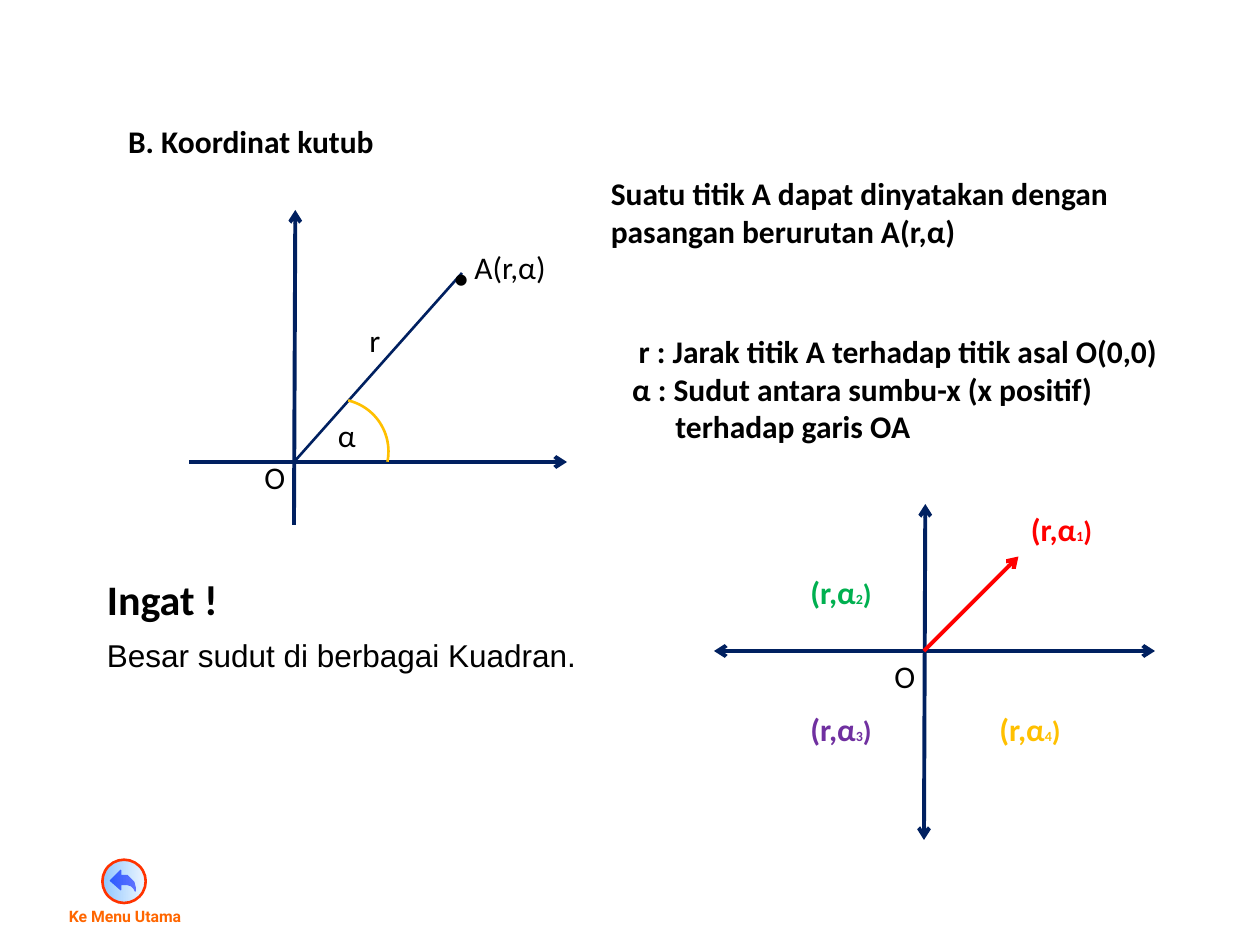
"""Build the slide that introduces polar coordinates."""
from dataclasses import dataclass

from lxml import etree
from pptx import Presentation
from pptx.dml.color import RGBColor
from pptx.enum.shapes import MSO_CONNECTOR, MSO_SHAPE
from pptx.enum.text import MSO_ANCHOR, MSO_AUTO_SIZE, PP_ALIGN
from pptx.oxml.ns import qn
from pptx.util import Emu, Pt

STRAIGHT = MSO_CONNECTOR.STRAIGHT
ARC, OVAL = MSO_SHAPE.ARC, MSO_SHAPE.OVAL
TOP, LEFT, NO_FIT = MSO_ANCHOR.TOP, PP_ALIGN.LEFT, MSO_AUTO_SIZE.NONE
PX = 9525


@dataclass(frozen=True)
class Theme:
    """Colours, fonts and type sizes of the slide."""
    ink: str = "000000"
    navy: str = "002060"
    red: str = "FF0000"
    green: str = "00B050"
    purple: str = "7030A0"
    gold: str = "FFC000"
    blue: str = "0000FF"
    ring: str = "FF3300"
    caption: str = "FF6600"
    sky: str = "3399FF"
    pale: str = "DFEFFF"
    font: str = "Calibri"
    plain_font: str = "Arial"
    menu_font: str = "Roboto"
    heading: int = 24
    body: int = 18
    bracket: int = 16
    small: int = 9
    index: int = 8
    thick: float = 2.25
    thin: float = 1.5
    hairline: float = 0.63


THEME = Theme()


@dataclass(frozen=True)
class Box:
    """A rectangle in px."""
    left: int
    top: int
    width: int
    height: int = 38

    def emu(self) -> tuple:
        """Return the rectangle in EMU."""
        return tuple(px(n) for n in (self.left, self.top, self.width, self.height))


@dataclass(frozen=True)
class Label:
    """A text of one format in its box."""
    text: str
    box: Box
    size: int = THEME.body
    bold: bool = False
    font: str = THEME.font
    color: str = THEME.ink
    wrap: bool = False


@dataclass(frozen=True)
class Line:
    """A straight line with optional arrowheads."""
    start: tuple
    end: tuple
    color: str = THEME.navy
    width: float = THEME.thick
    head: bool = False
    tail: bool = True


@dataclass(frozen=True)
class Quadrant:
    """The polar point that stands for one quadrant."""
    index: str
    left: int
    top: int
    color: str


LINES = (
    Line((224, 400), (225, 160)),
    Line((144, 352), (432, 352)),
    Line((224, 352), (352, 208), width=THEME.thin, tail=False),
    Line((705, 384), (704, 640), head=True),
    Line((544, 496), (880, 496), head=True),
    Line((704, 496), (776, 424), color=THEME.red),
)
LABELS = (
    Label("r", Box(272, 240, 28)),
    Label("O", Box(192, 344, 36)),
    Label("α", Box(248, 312, 34)),
    Label("A(r,α)", Box(352, 184, 74)),
    Label("•", Box(336, 192, 32)),
    Label("Suatu titik A dapat dinyatakan dengan pasangan berurutan A(r,α)",
          Box(456, 128, 432, 68), bold=True, wrap=True),
    Label("Ingat !", Box(72, 432, 105, 49), size=THEME.heading, bold=True),
    Label("Besar sudut di berbagai Kuadran.", Box(72, 480, 391), font=THEME.plain_font),
    Label("O", Box(672, 496, 36)),
)
QUADRANTS = (
    Quadrant("1", 776, 384, THEME.red),
    Quadrant("2", 608, 432, THEME.green),
    Quadrant("3", 608, 536, THEME.purple),
    Quadrant("4", 752, 536, THEME.gold),
)
DEFINITIONS = (
    ("r : Jarak titik A terhadap titik asal O(0,0)", 5),
    ("α : Sudut antara sumbu-x (x positif)", 0),
    ("terhadap garis OA", 33),
)
BACK_ARROW = (
    (92, 667), (97, 667), (99, 669), (102, 672), (103, 676), (103, 679), (102, 677),
    (100, 675), (97, 674), (92, 674), (92, 678), (84, 671), (92, 663),
)


def px(length: int) -> Emu:
    """Turn px into EMU."""
    return Emu(length * PX)


def rgb(color: str) -> RGBColor:
    """Turn a hex string into a colour."""
    return RGBColor.from_string(color)


def write(para, text: str, *, size: int = THEME.body, bold: bool = False,
          font: str = THEME.font, color: str = THEME.ink) -> None:
    """Add one formatted span to a paragraph."""
    span = para.add_run()
    span.text = text
    span.font.size, span.font.bold, span.font.name = Pt(size), bold, font
    span.font.color.rgb = rgb(color)


def add_box(shapes, box: Box, wrap: bool = False):
    """Add a text box and return its first paragraph."""
    frame = shapes.add_textbox(*box.emu()).text_frame
    frame.word_wrap = wrap
    return frame.paragraphs[0]


def add_label(shapes, label: Label) -> None:
    """Draw a text of one format."""
    write(add_box(shapes, label.box, label.wrap), label.text, size=label.size,
          bold=label.bold, font=label.font, color=label.color)


def add_quadrant(shapes, quadrant: Quadrant) -> None:
    """Draw the polar point of a quadrant with its small index."""
    para = add_box(shapes, Box(quadrant.left, quadrant.top, 66))
    for text, size in (("(r,α", THEME.body), (quadrant.index, THEME.index), (")", THEME.bracket)):
        write(para, text, size=size, bold=True, color=quadrant.color)


def add_line(shapes, line: Line) -> None:
    """Draw a line with its arrowheads and no shadow."""
    connector = shapes.add_connector(STRAIGHT, *(px(n) for n in line.start + line.end))
    connector.line.color.rgb = rgb(line.color)
    connector.line.width = Pt(line.width)
    properties = connector.element.spPr
    stroke = properties.find(qn("a:ln"))
    for tag, shown in (("a:headEnd", line.head), ("a:tailEnd", line.tail)):
        if shown:
            etree.SubElement(stroke, qn(tag), type="arrow")
    etree.SubElement(properties, qn("a:effectLst"))


def outline(shape, color: str, width: float) -> None:
    """Set the outline of a shape and drop its shadow."""
    shape.shadow.inherit = False
    shape.line.color.rgb = rgb(color)
    shape.line.width = Pt(width)


def place(holder, box: Box):
    """Move a placeholder and return its plain text frame."""
    holder.left, holder.top, holder.width, holder.height = box.emu()
    frame = holder.text_frame
    frame.word_wrap, frame.auto_size, frame.vertical_anchor = False, NO_FIT, TOP
    return frame


def fill_placeholders(slide) -> None:
    """Write the title and the definitions."""
    title = place(slide.shapes.title, Box(88, 88, 208)).paragraphs[0]
    title.alignment = LEFT
    write(title, "B. Koordinat kutub", bold=True)
    frame = place(slide.placeholders[1], Box(472, 248, 424, 97))
    for number, (text, indent) in enumerate(DEFINITIONS):
        para = frame.add_paragraph() if number else frame.paragraphs[0]
        para.alignment, para.space_before = LEFT, Pt(0)
        write(para, text, bold=True)
        layout = para._p.get_or_add_pPr()
        layout.set("marL", str(px(indent)))
        layout.set("indent", "0")
        etree.SubElement(layout, qn("a:buNone"))


def add_angle(shapes) -> None:
    """Draw the arc of the angle α."""
    arc = shapes.add_shape(ARC, *Box(216, 304, 80, 80).emu())
    arc.adjustments[0], arc.adjustments[1] = 170.07, 6.76
    arc.fill.background()
    outline(arc, THEME.gold, THEME.thin)


def add_menu_button(shapes) -> None:
    """Draw the button that leads back to the menu."""
    button = shapes.add_group_shape().shapes
    builder = button.build_freeform(*BACK_ARROW[0], scale=PX)
    builder.add_line_segments(BACK_ARROW[1:], close=True)
    arrow = builder.convert_to_shape()
    arrow.fill.solid()
    arrow.fill.fore_color.rgb = rgb(THEME.blue)
    outline(arrow, THEME.blue, THEME.hairline)
    disc = button.add_shape(OVAL, *Box(78, 655, 33, 33).emu())
    disc.fill.gradient()
    disc.fill.gradient_angle = 0
    for stop, color in zip(disc.fill.gradient_stops, (THEME.sky, THEME.pale)):
        stop.color.rgb = rgb(color)
    for node, alpha in zip(disc.element.spPr.iter(qn("a:srgbClr")), ("56000", "51000")):
        etree.SubElement(node, qn("a:alpha"), val=alpha)
    outline(disc, THEME.ring, THEME.thin)
    add_label(button, Label("Ke Menu Utama", Box(43, 686, 108, 24), size=THEME.small,
                            bold=True, font=THEME.menu_font, color=THEME.caption))


def main() -> None:
    """Build and save the deck."""
    deck = Presentation()
    deck.slide_width, deck.slide_height = px(960), px(720)
    slide = deck.slides.add_slide(deck.slide_layouts[1])
    fill_placeholders(slide)
    for line in LINES:
        add_line(slide.shapes, line)
    add_angle(slide.shapes)
    for label in LABELS:
        add_label(slide.shapes, label)
    for quadrant in QUADRANTS:
        add_quadrant(slide.shapes, quadrant)
    add_menu_button(slide.shapes)
    deck.save("out.pptx")


if __name__ == "__main__":
    main()
